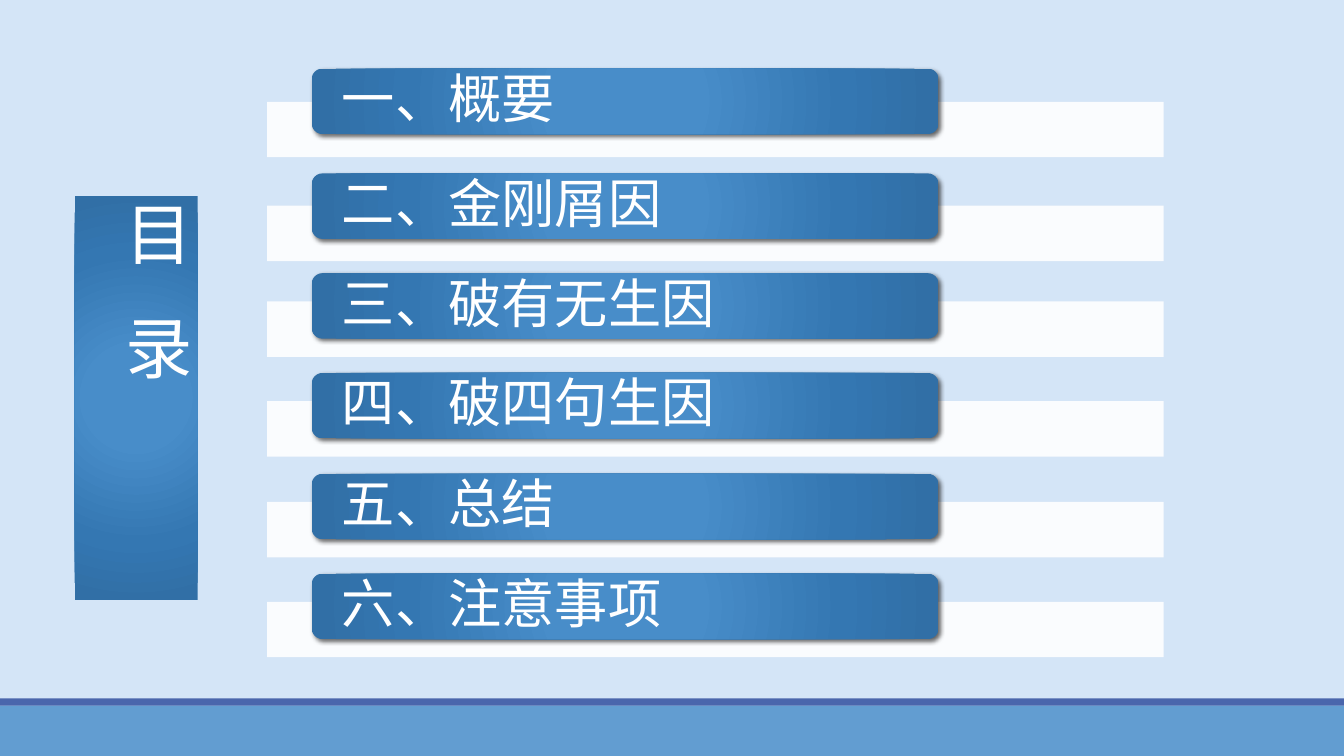
"""Build the contents slide: a vertical title beside six numbered sections."""
from lxml import etree
from pptx import Presentation
from pptx.dml.color import RGBColor
from pptx.enum import shapes, text
from pptx.oxml import parse_xml
from pptx.oxml.ns import qn
from pptx.util import Inches, Pt

FONT = "Noto Sans CJK SC"
NAMESPACE = 'xmlns:a="http://schemas.openxmlformats.org/drawingml/2006/main"'
PALE_BLUE = RGBColor(0xD4, 0xE5, 0xF7)
FOOTER_BLUE = RGBColor(0x62, 0x9D, 0xD1)
FOOTER_EDGE = RGBColor(0x4A, 0x66, 0xAC)
WHITE = RGBColor(0xFF, 0xFF, 0xFF)
GRADIENT_STOPS = {
    0: RGBColor(0x48, 0x8D, 0xC9),
    23: RGBColor(0x48, 0x8D, 0xC9),
    69: RGBColor(0x34, 0x77, 0xB2),
    97: RGBColor(0x31, 0x6F, 0xA6),
}
SECTIONS = [
    ("一、概要", 0.68, 1.01),
    ("二、金刚屑因", 1.72, 2.04),
    ("三、破有无生因", 2.71, 2.99),
    ("四、破四句生因", 3.7, 3.98),
    ("五、总结", 4.7, 4.98),
    ("六、注意事项", 5.69, 5.97),
]

presentation = Presentation()
presentation.slide_width = Inches(13.33)
presentation.slide_height = Inches(7.5)
slide = presentation.slides.add_slide(presentation.slide_layouts[5])
slide.background.fill.solid()
slide.background.fill.fore_color.rgb = PALE_BLUE


def add_block(kind, left, top, width, height, color=None):
    shape = slide.shapes.add_shape(
        kind, Inches(left), Inches(top), Inches(width), Inches(height))
    if color is not None:
        shape.fill.solid()
        shape.fill.fore_color.rgb = color
        shape.shadow.inherit = False
    shape.line.fill.background()
    return shape


def style_label(shape, label, size, anchor, margins):
    stops = "".join(
        f'<a:gs pos="{position * 1000}"><a:srgbClr val="{color}"/></a:gs>'
        for position, color in GRADIENT_STOPS.items())
    gradient = parse_xml(
        f'<a:gradFill {NAMESPACE} rotWithShape="1"><a:gsLst>{stops}</a:gsLst>'
        '<a:path path="circle"><a:fillToRect l="50000" t="50000" r="50000" b="50000"/>'
        '</a:path></a:gradFill>')
    properties = shape.element.spPr
    outline = properties.find(qn("a:ln"))
    if outline is None:
        properties.append(gradient)
    else:
        outline.addprevious(gradient)
    frame = shape.text_frame
    frame.text = label
    frame_format = {"word_wrap": True, "auto_size": text.MSO_AUTO_SIZE.NONE,
                    "vertical_anchor": anchor, **margins}
    for name, value in frame_format.items():
        setattr(frame, name, value)
    paragraph = frame.paragraphs[0]
    paragraph.alignment = text.PP_ALIGN.LEFT
    paragraph.line_spacing = 0.9
    run = paragraph.runs[0]
    for name, value in {"size": Pt(size), "name": FONT}.items():
        setattr(run.font, name, value)
    run.font.color.rgb = WHITE
    run_properties = run.font._element
    etree.SubElement(run_properties, qn("a:ea")).set("typeface", FONT)
    return run_properties


rectangle = shapes.MSO_SHAPE.RECTANGLE
add_block(rectangle, 0, 7, 13.33, 0.5, FOOTER_BLUE)
add_block(rectangle, 0, 6.93, 13.33, 0.07, FOOTER_EDGE)

title = slide.shapes.title
title_place = {"left": 0.74, "top": 1.94, "width": 1.22, "height": 4.01}
for name, value in title_place.items():
    setattr(title, name, Inches(value))
title_properties = style_label(
    title, "目 录", 48, text.MSO_ANCHOR.TOP,
    {"margin_top": Inches(0.05), "margin_left": Inches(0.1)})
title_properties.set("spc", "1100")
title.text_frame._txBody.bodyPr.set("vert", "eaVert")

bar_margins = {"margin_left": Inches(0.27), "margin_right": Inches(0.27),
               "margin_top": 0, "margin_bottom": 0}
for label, bar_top, strip_top in SECTIONS:
    strip = add_block(rectangle, 2.65, strip_top, 8.89, 0.55, WHITE)
    strip_color = strip.element.spPr.find(".//" + qn("a:srgbClr"))
    etree.SubElement(strip_color, qn("a:alpha")).set("val", "90000")

    bar = add_block(shapes.MSO_SHAPE.ROUNDED_RECTANGLE, 3.09, bar_top, 6.22, 0.65)
    style_label(bar, label, 38, text.MSO_ANCHOR.MIDDLE, bar_margins)
    bar.element.spPr.append(parse_xml(
        f'<a:effectLst {NAMESPACE}><a:outerShdw blurRad="{Pt(3)}" dist="{Pt(2)}" '
        'dir="2700000" algn="ctr" rotWithShape="0"><a:srgbClr val="000000">'
        '<a:alpha val="60000"/></a:srgbClr></a:outerShdw></a:effectLst>'))

presentation.save("out.pptx")
